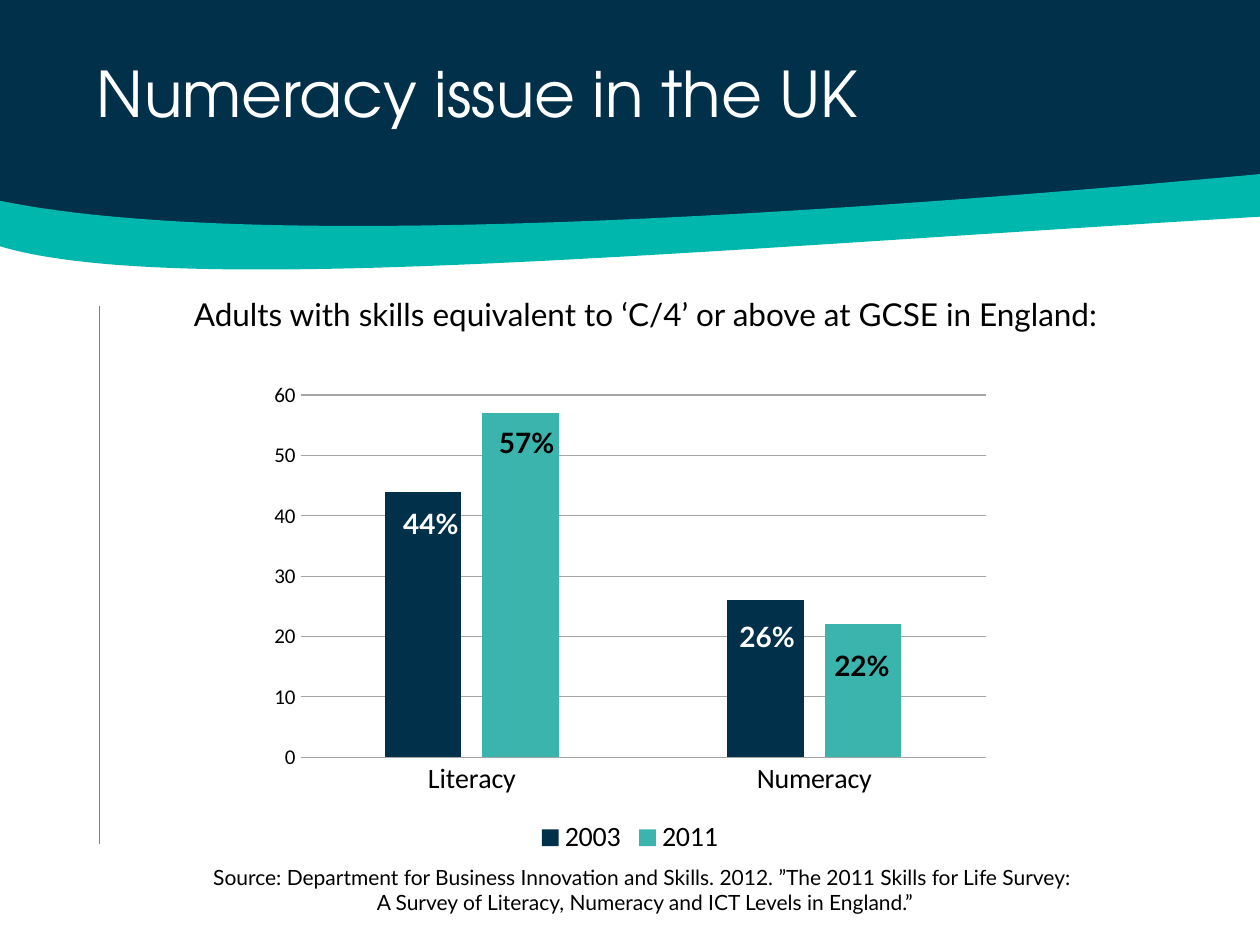
from lxml import etree
from pptx import Presentation
from pptx.chart.data import CategoryChartData as Data
from pptx.dml.color import RGBColor as Rgb
from pptx.enum.chart import XL_CHART_TYPE as Kind, XL_LEGEND_POSITION as Spot, XL_TICK_MARK as Tick
from pptx.enum.shapes import MSO_CONNECTOR as Link
from pptx.enum.text import MSO_ANCHOR as Anchor, MSO_AUTO_SIZE as Fit, PP_ALIGN as Align
from pptx.oxml.ns import qn
from pptx.util import Pt

NAVY = Rgb(0x00, 0x30, 0x4A)
TEAL = Rgb(0x00, 0xB7, 0xAE)
AQUA = Rgb(0x3A, 0xB4, 0xAD)
GREY = Rgb(0xA5, 0xA5, 0xA5)
BLACK = Rgb(0, 0, 0)
WHITE = Rgb(255, 255, 255)


def put(item, **vals):
    for key, val in vals.items():
        setattr(item, key, val)


def ink(font, size, name, color=BLACK, bold=False):
    put(font, size=Pt(size), name=name, bold=bold)
    font.color.rgb = color


def text(slide, box, words, size, name="Lato", color=BLACK, bold=False,
         align=Align.CENTER, space=1.0, fit=Fit.SHAPE_TO_FIT_TEXT):
    frame = slide.shapes.add_textbox(*map(Pt, box)).text_frame
    put(frame, word_wrap=True, vertical_anchor=Anchor.TOP, auto_size=fit)
    para = frame.paragraphs[0]
    put(para, text=words, alignment=align, line_spacing=space)
    for run in para.runs:
        ink(run.font, size, name, color, bold)


def blob(slide, box, steps, color):
    x, y, w, h = box
    pen = slide.shapes.build_freeform(Pt(x), Pt(y))
    pen.add_line_segments([(Pt(x + w), Pt(y)), (Pt(x + w), Pt(y + h)),
                           (Pt(x), Pt(y + h))], close=True)
    shape = pen.convert_to_shape()
    shape.shadow.inherit = False
    shape.fill.solid()
    shape.fill.fore_color.rgb = color
    shape.line.fill.background()
    route = next(shape._element.iter(qn("a:path")))
    for old in list(route):
        route.remove(old)
    for verb, *dots in steps:
        step = etree.SubElement(route, qn("a:" + verb))
        for px, py in dots:
            etree.SubElement(step, qn("a:pt"), x=str(Pt(px - x)), y=str(Pt(py - y)))
    etree.SubElement(route, qn("a:close"))


def header(slide, box):
    x, y, w, h = box
    end = x + w
    blob(slide, box, [
        ("moveTo", (x, y)),
        ("lnTo", (end, y)),
        ("lnTo", (end, 111.6)),
        ("cubicBezTo", (478, 118), (237, 163.4), (x, 131))], NAVY)
    blob(slide, (x, 99.4, w, 54.7), [
        ("moveTo", (x, 114.5)),
        ("cubicBezTo", (146, 145.4), (486, 121), (end, 99.4)),
        ("lnTo", (end, 123.8)),
        ("cubicBezTo", (381, 144), (97, 170.6), (x, 140.4))], TEAL)
    text(slide, (48.24, 32.4, 628.56, 91.44), "Numeracy issue in the UK", 36,
         "TeX Gyre Adventor", WHITE, align=Align.LEFT, space=0.9, fit=Fit.NONE)


def rule(slide, box):
    x, y, w, h = box
    line = slide.shapes.add_connector(Link.STRAIGHT, *map(Pt, (x, y, x + w, y + h)))
    line.line.width = Pt(0.5)
    line.line.color.rgb = TEAL
    etree.SubElement(line._element.spPr, qn("a:effectLst"))


def bars(slide, box):
    data = Data()
    data.categories = ["Literacy", "Numeracy"]
    data.add_series("2003", (44, 26))
    data.add_series("2011", (57, 22))
    chart = slide.shapes.add_chart(Kind.COLUMN_CLUSTERED, *map(Pt, box), data).chart
    put(chart, has_title=False, has_legend=True)
    ink(chart.font, 10, "Calibri")
    put(chart.legend, position=Spot.BOTTOM, include_in_layout=False)
    ink(chart.legend.font, 16, "Calibri")
    plot = chart.plots[0]
    put(plot, gap_width=219, overlap=-27, vary_by_categories=False)
    for row, color in zip(plot.series, (NAVY, AQUA)):
        row.format.fill.solid()
        row.format.fill.fore_color.rgb = color
    cats, vals = chart.category_axis, chart.value_axis
    for axis, size in ((cats, 16), (vals, 12)):
        put(axis, major_tick_mark=Tick.NONE, minor_tick_mark=Tick.NONE)
        ink(axis.tick_labels.font, size, "Calibri")
    vals.has_major_gridlines = True
    vals.format.line.fill.background()
    for line in (cats.format.line, vals.major_gridlines.format.line):
        line.width = Pt(0.75)
        line.color.rgb = GREY


def labels(slide, box):
    x, y, w, h = box
    marks = [(71.28, 72.72, "44%", WHITE), (126, 26.64, "57%", BLACK),
             (263.4, 137.52, "26%", WHITE), (317.6, 154.08, "22%", BLACK)]
    for dx, dy, words, color in marks:
        text(slide, (x + dx, y + dy, 53.28, 26.64), words, 16, color=color, bold=True)


def main():
    deck = Presentation()
    put(deck, slide_width=Pt(720), slide_height=Pt(540))
    slide = deck.slides.add_slide(deck.slide_layouts[6])
    header(slide, (-1.2, -6.5, 722.2, 149))
    rule(slide, (56.9, 175, 0, 307.4))
    text(slide, (85.68, 164.88, 566.64, 28.8),
         "Adults with skills equivalent to ‘C/4’ or above at GCSE in England:", 18)
    text(slide, (8.64, 490.32, 720, 36),
         "Source: Department for Business Innovation and Skills. 2012. "
         "”The 2011 Skills for Life Survey: \v"
         "A Survey of Literacy, Numeracy and ICT Levels in England.”", 12)
    area = (148.32, 213.12, 423.36, 278.64)
    bars(slide, area)
    labels(slide, area)
    deck.save("out.pptx")


if __name__ == "__main__":
    main()
